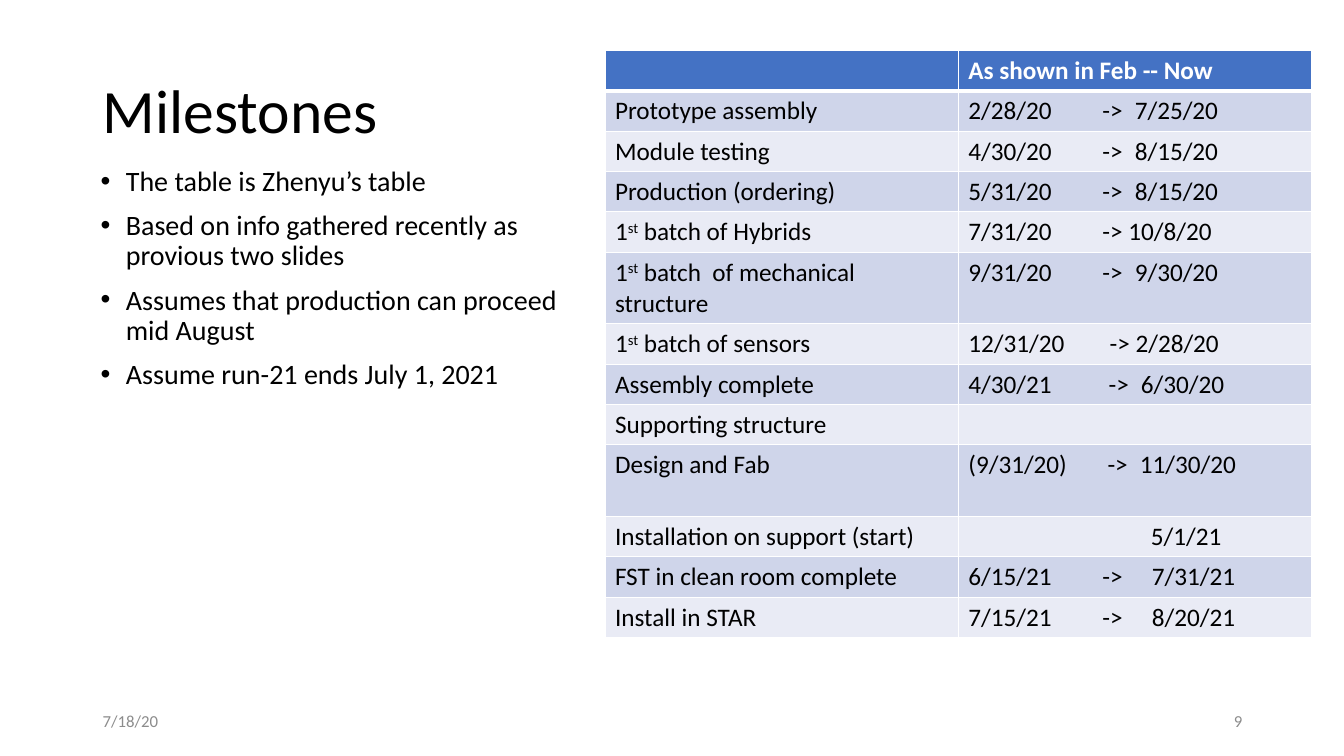
from dataclasses import dataclass

from lxml import etree
from pptx import Presentation
from pptx import util as u
from pptx.dml.color import RGBColor
from pptx.enum import text
from pptx.oxml import ns


@dataclass(frozen=True)
class Theme:
    """Colours and type sizes of the slide."""
    font: str = "Calibri"
    ink: str = "000000"
    white: str = "FFFFFF"
    muted: str = "8C8C8C"
    header: str = "4472C4"
    bands: tuple = ("CFD5EA", "E9EBF5")
    title_size: int = 44
    body_size: int = 20
    table_size: int = 18
    footer_size: int = 12


THEME = Theme()
BULLETS = [
    "The table is Zhenyu’s table",
    "Based on info gathered recently as provious two slides",
    "Assumes that production can proceed mid August",
    "Assume run-21 ends July 1, 2021",
]
ROW_HEIGHT, TALL_ROW_HEIGHT = 0.4, 0.71
TALL_ROWS = ("1st batch  of mechanical structure", "Design and Fab")
MILESTONES = [
    ("Prototype assembly", "2/28/20\t->\t7/25/20", (1.33, 1.65)),
    ("Module testing", "4/30/20\t->\t8/15/20", (1.33, 1.65)),
    ("Production (ordering)", "5/31/20\t->\t8/15/20", (1.33, 1.65)),
    ("1st batch of Hybrids", "7/31/20\t-> 10/8/20", (1.33,)),
    ("1st batch  of mechanical structure", "9/31/20\t->\t9/30/20", (1.33, 1.65)),
    ("1st batch of sensors", "12/31/20\t-> 2/28/20", (1.4,)),
    ("Assembly complete", "4/30/21\t->\t6/30/20", (1.39, 1.71)),
    ("Supporting structure", "", ()),
    ("Design and Fab", "(9/31/20)\t->\t11/30/20", (1.38, 1.7)),
    ("Installation on support (start)", "\t5/1/21", (1.81,)),
    ("FST in clean room complete", "6/15/21\t->\t7/31/21", (1.33, 1.82)),
    ("Install in STAR", "7/15/21\t->\t8/20/21", (1.33, 1.82)),
]


def set_font(paragraph, size, color, bold=False):
    """Set the font of a whole paragraph."""
    font = paragraph.font
    font.name, font.size, font.bold = THEME.font, u.Pt(size), bold
    font.color.rgb = RGBColor.from_string(color)


def add_text_frame(slide, box, anchor):
    """Add a wrapping text box and return its text frame."""
    frame = slide.shapes.add_textbox(*map(u.Inches, box)).text_frame
    frame.word_wrap = True
    frame.vertical_anchor = anchor
    return frame


def add_line(slide, box, words, size, color, align=text.PP_ALIGN.LEFT):
    """Add one vertically centred line of text."""
    paragraph = add_text_frame(slide, box, text.MSO_ANCHOR.MIDDLE).paragraphs[0]
    paragraph.text = words
    paragraph.alignment = align
    paragraph.line_spacing = 0.9 if size == THEME.title_size else 1.0
    set_font(paragraph, size, color)


def add_bullets(slide, box, items):
    """Add the bulleted list."""
    frame = add_text_frame(slide, box, text.MSO_ANCHOR.TOP)
    for index, item in enumerate(items):
        paragraph = frame.add_paragraph() if index else frame.paragraphs[0]
        paragraph.text = item
        properties = paragraph._p.get_or_add_pPr()
        properties.set("marL", str(u.Inches(0.25)))
        properties.set("indent", str(u.Inches(-0.25)))
        etree.SubElement(properties, ns.qn("a:buFont"), typeface="Arial")
        etree.SubElement(properties, ns.qn("a:buChar"), char="•")
        paragraph.line_spacing = 0.9
        paragraph.space_before = u.Pt(10)
        set_font(paragraph, THEME.body_size, THEME.ink)


def set_borders(cell, top, bottom):
    """Draw white cell borders with the given top and bottom widths."""
    properties = cell._tc.get_or_add_tcPr()
    widths = {"a:lnL": 1, "a:lnR": 1, "a:lnT": top, "a:lnB": bottom}
    for index, (side, width) in enumerate(widths.items()):
        line = etree.Element(ns.qn(side), w=str(u.Pt(width)))
        fill = etree.SubElement(line, ns.qn("a:solidFill"))
        etree.SubElement(fill, ns.qn("a:srgbClr"), val=THEME.white)
        properties.insert(index, line)


def fill_cell(cell, words, fill, color, bold=False, stops=()):
    """Write a cell with its fill, tab stops and raised ordinal."""
    cell.fill.solid()
    cell.fill.fore_color.rgb = RGBColor.from_string(fill)
    paragraph = cell.text_frame.paragraphs[0]
    if words.startswith("1st"):
        for part in ("1", "st", words[3:]):
            run = paragraph.add_run()
            run.text = part
            if part == "st":
                run._r.get_or_add_rPr().set("baseline", "30000")
    elif words:
        paragraph.add_run().text = words
    if stops:
        tabs = etree.SubElement(paragraph._p.get_or_add_pPr(), ns.qn("a:tabLst"))
        for stop in stops:
            etree.SubElement(tabs, ns.qn("a:tab"), pos=str(u.Inches(stop)), algn="l")
    set_font(paragraph, THEME.table_size, color, bold)


def add_milestone_table(slide, box):
    """Add the table of planned and current dates."""
    table = slide.shapes.add_table(len(MILESTONES) + 1, 2, *map(u.Inches, box)).table
    for column in table.columns:
        column.width = u.Inches(box[2] / 2)
    rows = [("", "As shown in Feb -- Now", ())] + MILESTONES
    for index, (name, dates, stops) in enumerate(rows):
        is_header = index == 0
        height = TALL_ROW_HEIGHT if name in TALL_ROWS else ROW_HEIGHT
        table.rows[index].height = u.Inches(height)
        fill = THEME.header if is_header else THEME.bands[(index - 1) % 2]
        color = THEME.white if is_header else THEME.ink
        name_cell, dates_cell = table.rows[index].cells
        fill_cell(name_cell, name, fill, color, is_header)
        fill_cell(dates_cell, dates, fill, color, is_header, stops)
        for cell in (name_cell, dates_cell):
            set_borders(cell, 3 if index == 1 else 1, 3 if is_header else 1)


def add_footer(slide, box):
    """Add the date at the left and the slide number at the right."""
    left, top, width, height = box
    size, color = THEME.footer_size, THEME.muted
    add_line(slide, (left, top, 3, height), "7/18/20", size, color)
    add_line(slide, (left + width - 3, top, 3, height), "9", size, color,
             text.PP_ALIGN.RIGHT)


def main():
    """Build and save the milestones slide."""
    presentation = Presentation()
    presentation.slide_width = u.Inches(13.33)
    presentation.slide_height = u.Inches(7.5)
    slide = presentation.slides.add_slide(presentation.slide_layouts[6])
    add_line(slide, (0.92, 0.4, 11.5, 1.45), "Milestones", THEME.title_size, THEME.ink)
    add_bullets(slide, (0.9, 1.61, 4.99, 4.76), BULLETS)
    add_footer(slide, (0.92, 6.95, 11.5, 0.4))
    add_milestone_table(slide, (6, 0.5, 7.01, 5.86))
    presentation.save("out.pptx")


if __name__ == "__main__":
    main()
